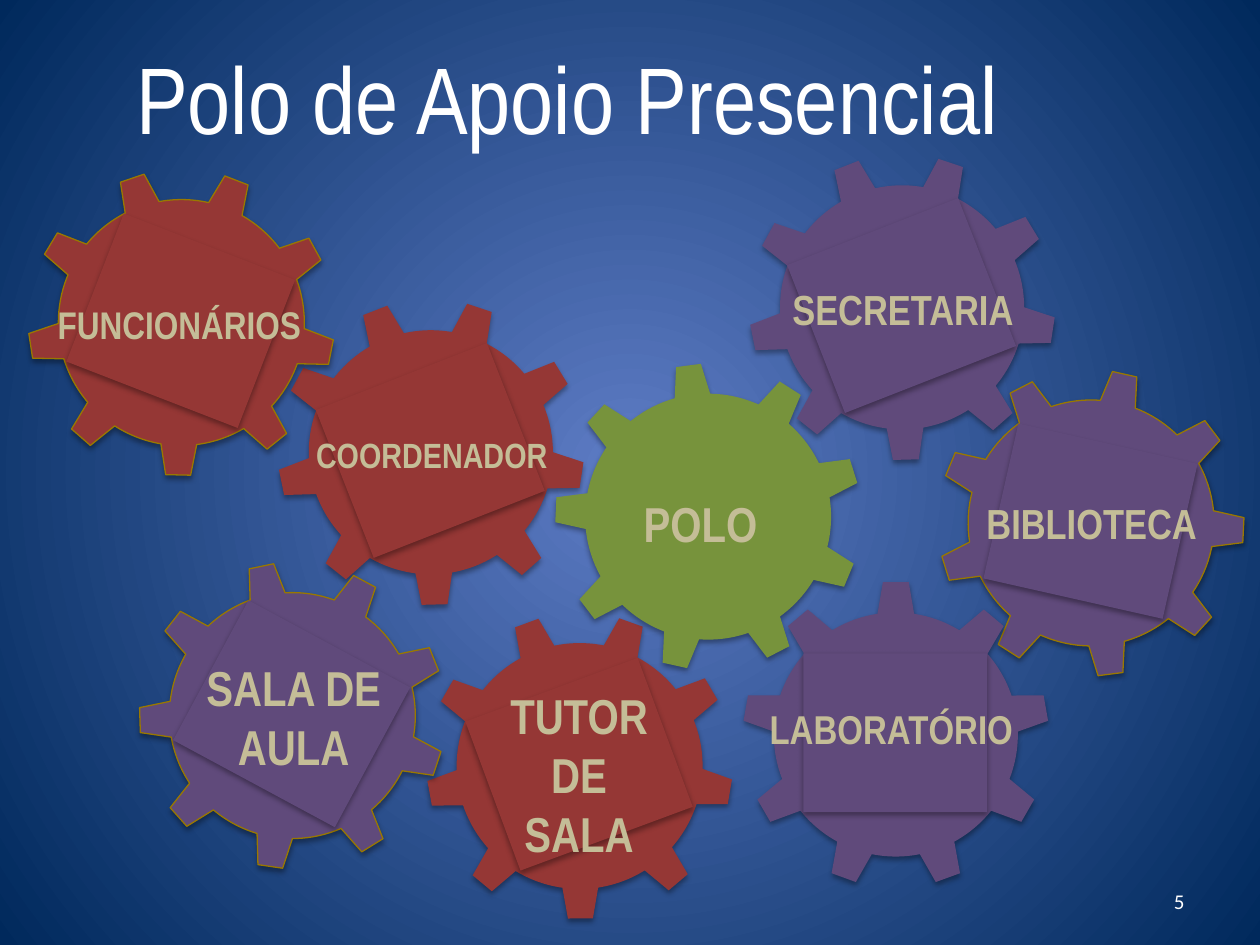
import pptx
import pptx.dml.color
import pptx.enum.shapes
import pptx.enum.text
import pptx.oxml
import pptx.oxml.ns
import pptx.util

Pt = pptx.util.Pt
RGBColor = pptx.dml.color.RGBColor
MSO_SHAPE = pptx.enum.shapes.MSO_SHAPE
MSO_ANCHOR = pptx.enum.text.MSO_ANCHOR
MSO_AUTO_SIZE = pptx.enum.text.MSO_AUTO_SIZE
PP_ALIGN = pptx.enum.text.PP_ALIGN
qn = pptx.oxml.ns.qn

RED = RGBColor(0x95, 0x37, 0x35)
PURPLE = RGBColor(0x60, 0x4A, 0x7B)
GREEN = RGBColor(0x77, 0x93, 0x3C)
GOLD = RGBColor(0x99, 0x78, 0x00)
SAND = RGBColor(0xC4, 0xBD, 0x97)
WHITE = RGBColor(0xFF, 0xFF, 0xFF)
BLUE = RGBColor(0x5E, 0x7C, 0xC5)
NAVY = RGBColor(0x00, 0x29, 0x5C)

GEAR_SIZE = 175.7
PLATE_LEFT, PLATE_TOP, PLATE_WIDTH, PLATE_HEIGHT = 35, 41.4, 105, 90.8
NAMESPACE = pptx.oxml.ns.nsdecls("a")
SHADOW = (
    f'<a:outerShdw {NAMESPACE} blurRad="40000" dist="23000" dir="5400000" rotWithShape="0">'
    '<a:srgbClr val="000000"><a:alpha val="35000"/></a:srgbClr></a:outerShdw>'
)
RADIAL = (
    f'<a:path {NAMESPACE} path="circle">'
    '<a:fillToRect l="50000" t="50000" r="50000" b="50000"/></a:path>'
)


def add_part(group, kind, box, rotation, color):
    shape = group.shapes.add_shape(kind, *map(Pt, box))
    shape.rotation = rotation
    shape.fill.solid()
    shape.fill.fore_color.rgb = color
    shape.line.fill.background()
    shape.shadow.inherit = False
    effects = shape._element.spPr.find(qn("a:effectLst"))
    effects.append(pptx.oxml.parse_xml(SHADOW))
    return shape


def add_text(box, lines, size, color, align, font="Arial Narrow", bold=False):
    frame = slide.shapes.add_textbox(*map(Pt, box)).text_frame
    frame.text = lines
    for paragraph in frame.paragraphs:
        paragraph.alignment = align
        paragraph.font.name = font
        paragraph.font.size = Pt(size)
        paragraph.font.bold = bold
        paragraph.font.color.rgb = color
    return frame


presentation = pptx.Presentation()
presentation.slide_width = Pt(720)
presentation.slide_height = Pt(540)
slide = presentation.slides.add_slide(presentation.slide_layouts[6])

background = slide.background.fill
background.gradient()
for stop, color in zip(background.gradient_stops, (BLUE, NAVY)):
    stop.color.rgb = color
linear = next(slide._element.iter(qn("a:lin")))
linear.getparent().replace(linear, pptx.oxml.parse_xml(RADIAL))

for box, text, size, align, font in [
    ((-11.5, 5, 671, 100.8), "Polo de Apoio Presencial", 54, PP_ALIGN.CENTER, "Arial Narrow"),
    ((516.2, 500.4, 167.8, 28.8), "5", 12, PP_ALIGN.RIGHT, "Calibri"),
]:
    frame = add_text(box, text, size, WHITE, align, font)
    frame.word_wrap = True
    frame.vertical_anchor = MSO_ANCHOR.MIDDLE

gears = [
    (243.4, 349.9, 339.7, RED, False, False, "TUTOR\nDE\nSALA", 28, (283.7, 388.1, 94.3, 108.7)),
    (535.7, 211, 12.7, PURPLE, True, False, "BIBLIOTECA", 24, (556.6, 280.8, 135.4, 36)),
    (158.4, 170.6, 338.6, RED, False, True, "COORDENADOR", 20, (173.5, 244.1, 147.6, 31.7)),
    (316.8, 207.4, 352.6, GREEN, False, False, "POLO", 28, (360.7, 278.6, 79.9, 41)),
    (427.7, 87.8, 338.6, PURPLE, False, True, "SECRETARIA", 24, (445.7, 158.4, 141.8, 36)),
    (424.1, 331.9, 0, PURPLE, False, True, "LABORATÓRIO", 23, (432.7, 398.9, 161.3, 36)),
    (79.2, 321.1, 28.3, PURPLE, True, False, "SALA DE \nAULA", 28, (110.2, 372.2, 115.2, 74.9)),
    (15.8, 96.5, 21.2, RED, True, False, "FUNCIONÁRIOS", 22, (25.9, 168.5, 155.5, 33.8)),
]
for left, top, rotation, color, outlined, long_teeth, label, size, label_box in gears:
    group = slide.shapes.add_group_shape()
    gear = add_part(group, MSO_SHAPE.GEAR_9, (left, top, GEAR_SIZE, GEAR_SIZE), rotation, color)
    if outlined:
        gear.line.color.rgb = GOLD
        gear.line.width = Pt(0.75)
    if long_teeth:
        gear.adjustments[0] = 0.103
    if color != GREEN:
        plate_box = (left + PLATE_LEFT, top + PLATE_TOP, PLATE_WIDTH, PLATE_HEIGHT)
        add_part(group, MSO_SHAPE.RECTANGLE, plate_box, rotation, color)
    align = PP_ALIGN.CENTER if "\n" in label else PP_ALIGN.LEFT
    frame = add_text(label_box, label, size, SAND, align, bold=True)
    frame.word_wrap = False
    frame.auto_size = MSO_AUTO_SIZE.SHAPE_TO_FIT_TEXT

presentation.save("out.pptx")
